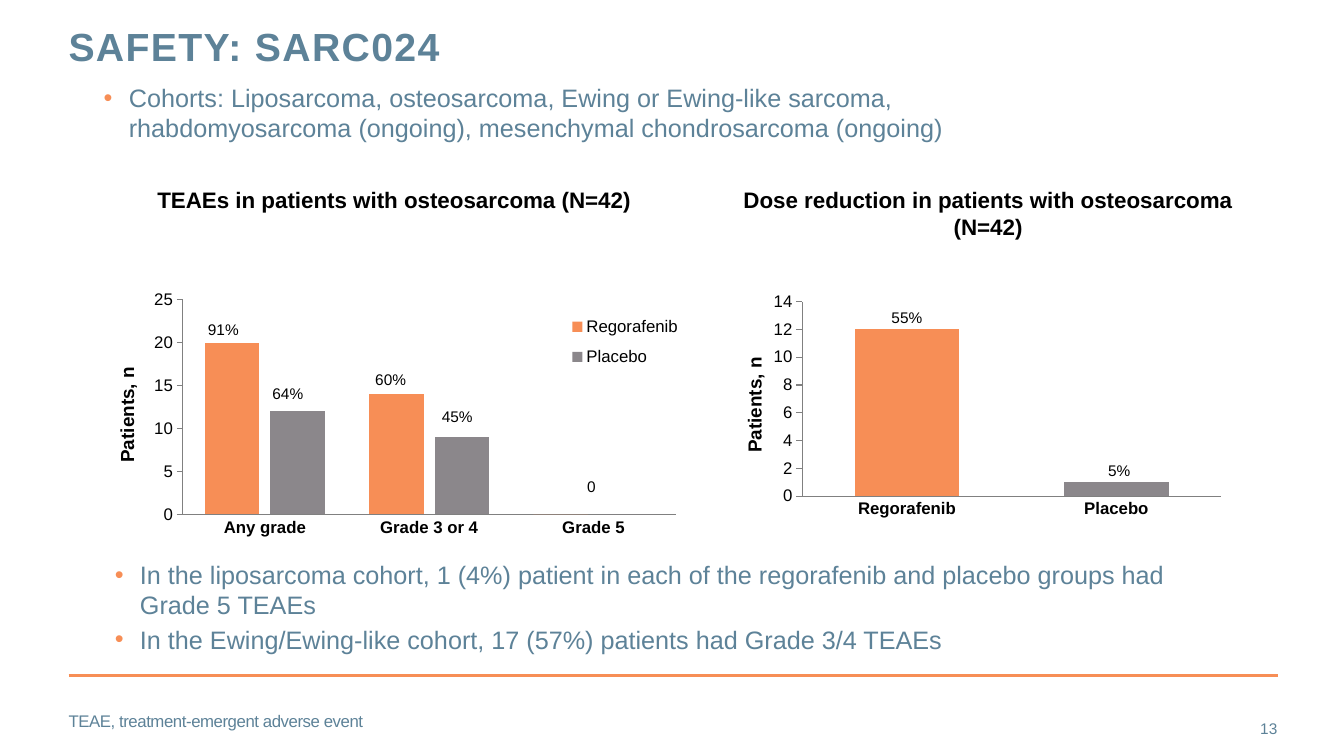
from dataclasses import dataclass

from lxml.etree import SubElement
from pptx import Presentation
from pptx.chart.data import CategoryChartData
from pptx.dml.color import RGBColor
from pptx.enum.chart import XL_CHART_TYPE, XL_LEGEND_POSITION, XL_TICK_MARK
from pptx.enum.shapes import MSO_CONNECTOR
from pptx.enum.text import MSO_ANCHOR, PP_ALIGN
from pptx.oxml import parse_xml
from pptx.oxml.ns import nsdecls, qn
from pptx.util import Inches, Pt


@dataclass(frozen=True)
class Theme:
    font: str = "Arial"
    slate: RGBColor = RGBColor(0x5D, 0x82, 0x98)
    orange: RGBColor = RGBColor(0xF7, 0x8E, 0x56)
    grey: RGBColor = RGBColor(0x8B, 0x87, 0x8B)
    axis: RGBColor = RGBColor(0x80, 0x80, 0x80)
    black: RGBColor = RGBColor(0, 0, 0)
    title: float = 28
    bullet: float = 18
    heading: float = 16
    axis_title: float = 13.5
    small: float = 12
    label: float = 11
    chart: float = 10


THEME = Theme()


# Text
def style_font(font, size, color=THEME.black, bold=False):
    font.name = THEME.font
    font.size = Pt(size)
    font.bold = bold
    font.color.rgb = color


def add_box(page, place, inset=True, anchor=MSO_ANCHOR.TOP, wrap=True):
    box = page.shapes.add_textbox(*map(Inches, place))
    frame = box.text_frame
    frame.word_wrap = wrap
    frame.vertical_anchor = anchor
    if not inset:
        frame.margin_left = frame.margin_right = 0
        frame.margin_top = frame.margin_bottom = 0
    return frame


def add_span(para, text, size, color=THEME.black, bold=False, tracking=0):
    span = para.add_run()
    span.text = text
    style_font(span.font, size, color, bold)
    if tracking:
        span.font._element.set("spc", str(round(tracking * 100)))


def add_line_text(page, place, text, size, color=THEME.black, bold=False,
                  align=PP_ALIGN.LEFT, tracking=0, **box_options):
    para = add_box(page, place, **box_options).paragraphs[0]
    para.alignment = align
    add_span(para, text, size, color, bold, tracking)
    return para


def add_bullets(page, place, items):
    frame = add_box(page, place)
    for index, lines in enumerate(items):
        para = frame.add_paragraph() if index else frame.paragraphs[0]
        para.space_after = Pt(3)
        properties = para._p.get_or_add_pPr()
        properties.set("marL", str(Inches(0.25)))
        properties.set("indent", str(-Inches(0.25)))
        color = SubElement(properties, qn("a:buClr"))
        SubElement(color, qn("a:srgbClr")).set("val", str(THEME.orange))
        SubElement(properties, qn("a:buFont")).set("typeface", THEME.font)
        SubElement(properties, qn("a:buChar")).set("char", "•")
        for number, line in enumerate(lines):
            if number:
                para.add_line_break()
            add_span(para, line, THEME.bullet, THEME.slate)


def add_heading(page, left, text):
    para = add_line_text(page, (left, 1.8, 5.06, 0.4), text, THEME.heading,
                         bold=True, align=PP_ALIGN.CENTER)
    para.space_after = Pt(3)


def add_value_labels(page, labels):
    for text, left, top, width in labels:
        add_line_text(page, (left, top, width, 0.29), text, THEME.label,
                      align=PP_ALIGN.CENTER, wrap=False)


# Charts
def make_layout(x, y, width=None, height=None, inner=False):
    parts = '<c:layoutTarget val="inner"/>' if inner else ""
    parts += '<c:xMode val="edge"/><c:yMode val="edge"/>'
    sizes = {"x": x, "y": y, "w": width, "h": height}
    parts += "".join(f'<c:{key} val="{value}"/>'
                     for key, value in sizes.items() if value is not None)
    return parse_xml(f'<c:layout {nsdecls("c")}><c:manualLayout>{parts}'
                     "</c:manualLayout></c:layout>")


def place_part(element, layout, before):
    for old in element.findall(qn("c:layout")):
        element.remove(old)
    following = [child for child in element
                 if child.tag in [qn(name) for name in before]]
    if following:
        following[0].addprevious(layout)
    else:
        element.append(layout)


def style_axis(axis, tick, bold=False):
    axis.has_major_gridlines = False
    axis.major_tick_mark = tick
    axis.minor_tick_mark = XL_TICK_MARK.NONE
    axis.format.line.color.rgb = THEME.axis
    axis.format.line.width = Pt(0.75)
    style_font(axis.tick_labels.font, THEME.small, bold=bold)


def add_column_chart(page, place, categories, series, top_value, step,
                     gap, overlap, plot_area, title_at):
    data = CategoryChartData()
    data.categories = categories
    for name, values in series:
        data.add_series(name, values)
    chart = page.shapes.add_chart(XL_CHART_TYPE.COLUMN_CLUSTERED,
                                  *map(Inches, place), data).chart
    chart.has_title = False
    chart.has_legend = False
    style_font(chart.font, THEME.chart)

    plot = chart.plots[0]
    plot.vary_by_categories = False
    plot.gap_width, plot.overlap = gap, overlap
    for bars, color in zip(plot.series, (THEME.orange, THEME.grey)):
        bars.format.fill.solid()
        bars.format.fill.fore_color.rgb = color

    style_axis(chart.category_axis, XL_TICK_MARK.NONE, bold=True)
    values_axis = chart.value_axis
    style_axis(values_axis, XL_TICK_MARK.OUTSIDE)
    values_axis.minimum_scale, values_axis.maximum_scale = 0, top_value
    values_axis.major_unit = step
    title = values_axis.axis_title
    add_span(title.text_frame.paragraphs[0], "Patients, n",
             THEME.axis_title, bold=True)

    place_part(title._element, make_layout(*title_at),
               ("c:overlay", "c:spPr", "c:txPr"))
    area = chart._chartSpace.chart.plotArea
    place_part(area, make_layout(*plot_area, inner=True), ("c:barChart",))
    return chart


def add_legend(chart, area):
    chart.has_legend = True
    legend = chart.legend
    legend.position = XL_LEGEND_POSITION.RIGHT
    legend.include_in_layout = False
    style_font(legend.font, THEME.small)
    place_part(legend._element, make_layout(*area),
               ("c:overlay", "c:spPr", "c:txPr"))


def add_rule(page):
    rule = page.shapes.add_connector(MSO_CONNECTOR.STRAIGHT, Inches(0.68),
                                     Inches(6.7), Inches(12.68), Inches(6.7))
    rule.line.color.rgb = THEME.orange
    rule.line.width = Pt(2)
    SubElement(rule._element.spPr, qn("a:effectLst"))


def main():
    deck = Presentation()
    deck.slide_width, deck.slide_height = Inches(13.33), Inches(7.5)
    page = deck.slides.add_slide(deck.slide_layouts[6])

    # Title and footer
    add_rule(page)
    title = add_line_text(page, (0.68, 0.27, 9.56, 0.88), "SAFETY: SARC024", THEME.title,
                          THEME.slate, bold=True, tracking=1, inset=False)
    title.line_spacing = Pt(30)
    add_line_text(page, (11.81, 7.03, 0.86, 0.4), "13", THEME.label, THEME.slate,
                  align=PP_ALIGN.RIGHT, inset=False, anchor=MSO_ANCHOR.MIDDLE)
    add_line_text(page, (0.68, 6.95, 10.95, 0.4), "TEAE, treatment-emergent adverse event",
                  THEME.small, THEME.slate, tracking=-0.3, inset=False,
                  anchor=MSO_ANCHOR.MIDDLE)

    # Bullets
    add_bullets(page, (0.93, 0.77, 10.23, 0.67), [
        ["Cohorts: Liposarcoma, osteosarcoma, Ewing or Ewing-like sarcoma, "
         "rhabdomyosarcoma (ongoing), mesenchymal chondrosarcoma (ongoing)"]])
    add_bullets(page, (1.04, 5.5, 11.44, 0.67), [
        ["In the liposarcoma cohort, 1 (4%) patient in each of the regorafenib "
         "and placebo groups had", "Grade 5 TEAEs"],
        ["In the Ewing/Ewing-like cohort, 17 (57%) patients had Grade 3/4 TEAEs"]])

    # Adverse events
    add_heading(page, 1.38, "TEAEs in patients with osteosarcoma (N=42)")
    events = add_column_chart(
        page, (0.93, 2.83, 5.89, 2.88), ["Any grade", "Grade 3 or 4", "Grade 5"],
        [("Regorafenib", (20, 14, 0)), ("Placebo", (12, 9, 0))], 25, 5, 80, -20,
        (0.15, 0.05, 0.83, 0.74), (0.03, 0.27))
    add_legend(events, (0.8, 0.07, 0.19, 0.25))
    add_value_labels(page, [("91%", 1.96, 3.13, 0.51), ("60%", 3.62, 3.62, 0.51),
                            ("64%", 2.6, 3.76, 0.51), ("45%", 4.28, 3.99, 0.51),
                            ("0", 5.72, 4.68, 0.29)])

    # Dose reduction
    add_heading(page, 7.27, "Dose reduction in patients with osteosarcoma (N=42)")
    doses = add_column_chart(
        page, (7.33, 2.82, 4.83, 2.88), ["Regorafenib", "Placebo"],
        [("Series 1", (12, 1))], 14, 2, 100, -60,
        (0.13, 0.06, 0.86, 0.67), (0, 0.24))
    placebo_fill = doses.plots[0].series[0].points[1].format.fill
    placebo_fill.solid()
    placebo_fill.fore_color.rgb = THEME.grey
    add_value_labels(page, [("55%", 8.74, 3.01, 0.51), ("5%", 10.89, 4.53, 0.42)])

    deck.save("out.pptx")


if __name__ == "__main__":
    main()
